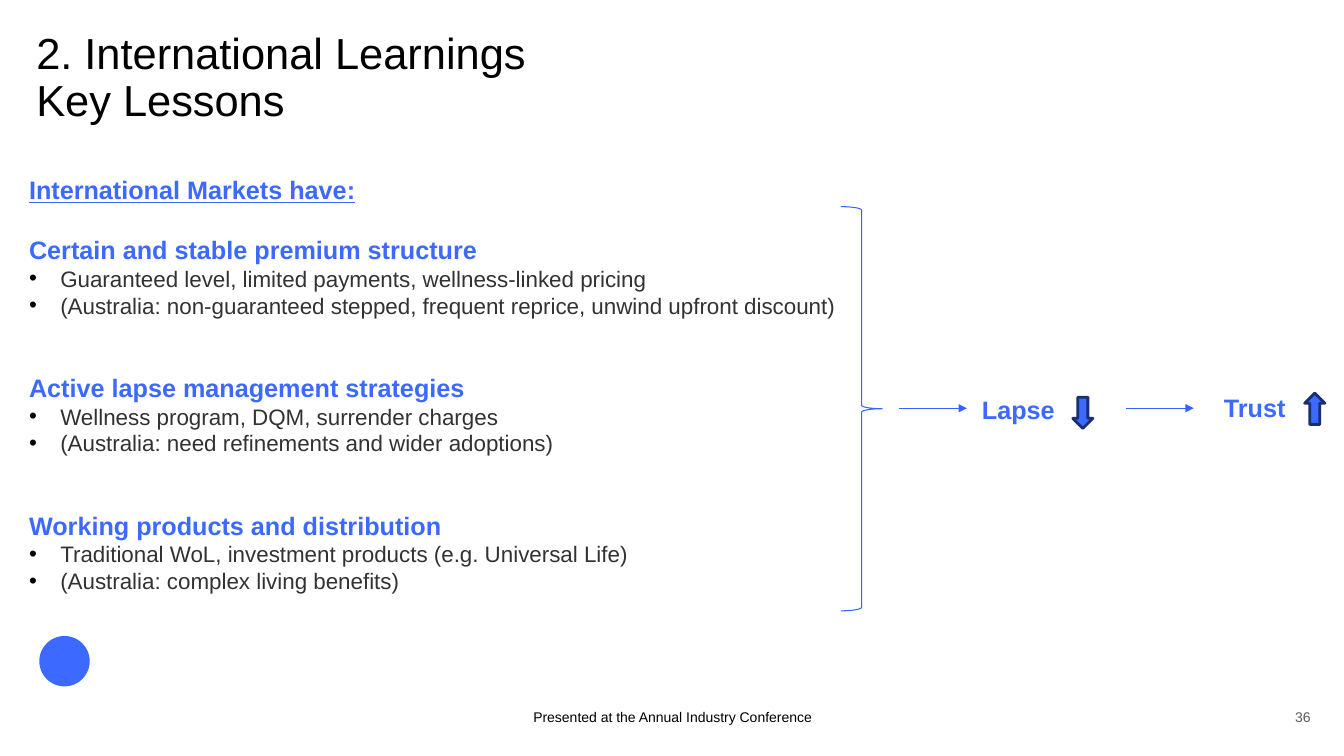
from pptx import Presentation
from pptx.dml.color import RGBColor
from pptx.enum.shapes import MSO_CONNECTOR, MSO_SHAPE
from pptx.enum.text import MSO_ANCHOR, PP_ALIGN
from pptx.oxml import parse_xml
from pptx.oxml.ns import nsdecls
from pptx.util import Inches, Pt

BLUE, LINE_BLUE, NAVY = "3C69FF", "3664FE", "1A2E70"
BLACK, DARK_GREY, GREY = "000000", "323232", "5B5B5B"


def color(value):
    return RGBColor.from_string(value)


def write(para, text, size=18, fill=BLUE, bold=False, underline=False,
          align=PP_ALIGN.LEFT, before=0, spacing=1.0, bullet=False):
    para.text = text
    para.alignment = align
    para.space_before = Pt(before)
    para.line_spacing = spacing
    for span in para.runs:
        span.font.name = "Arial"
        span.font.size = Pt(size)
        span.font.bold = bold
        span.font.underline = underline
        span.font.color.rgb = color(fill)
    if bullet:
        properties = para._p.get_or_add_pPr()
        properties.set("marL", str(Inches(0.31)))
        properties.set("indent", str(-Inches(0.31)))
        properties.append(parse_xml(
            f'<a:buClr {nsdecls("a")}><a:srgbClr val="{BLACK}"/></a:buClr>'))
        properties.append(parse_xml(f'<a:buFont {nsdecls("a")} typeface="Arial"/>'))
        properties.append(parse_xml(f'<a:buChar {nsdecls("a")} char="•"/>'))


deck = Presentation()
deck.slide_width, deck.slide_height = Inches(13.33), Inches(7.5)
page = deck.slides.add_slide(deck.slide_layouts[6])

# Title and footer
margin_free = [
    ((0.36, 0.32, 12.18, 1.09), MSO_ANCHOR.TOP, "2. International Learnings\nKey Lessons",
     dict(size=31, fill=BLACK, spacing=0.9)),
    ((12.54, 7, 0.46, 0.2), MSO_ANCHOR.BOTTOM, "36",
     dict(size=10, fill=GREY, align=PP_ALIGN.RIGHT)),
    ((4.42, 7, 4.5, 0.2), MSO_ANCHOR.BOTTOM, "Presented at the Annual Industry Conference",
     dict(size=10, fill=BLACK, align=PP_ALIGN.CENTER)),
]
for place, anchor, text, style in margin_free:
    box = page.shapes.add_textbox(*map(Inches, place))
    frame = box.text_frame
    frame.word_wrap = True
    frame.vertical_anchor = anchor
    frame.margin_left = frame.margin_right = frame.margin_top = frame.margin_bottom = 0
    write(frame.paragraphs[0], text, **style)

# Lessons from international markets
lessons = [
    ("Certain and stable premium structure",
     "Guaranteed level, limited payments, wellness-linked pricing",
     "(Australia: non-guaranteed stepped, frequent reprice, unwind upfront discount)"),
    ("Active lapse management strategies",
     "Wellness program, DQM, surrender charges",
     "(Australia: need refinements and wider adoptions)"),
    ("Working products and distribution",
     "Traditional WoL, investment products (e.g. Universal Life)",
     "(Australia: complex living benefits)"),
]
box = page.shapes.add_textbox(Inches(0.19), Inches(1.68), Inches(8.23), Inches(4.58))
frame = box.text_frame
frame.word_wrap = True
write(frame.paragraphs[0], "International Markets have:", bold=True, underline=True)
for index, (heading, *points) in enumerate(lessons):
    write(frame.add_paragraph(), heading, bold=True, before=38.5 if index else 21.5)
    for point in points:
        write(frame.add_paragraph(), point, size=16, fill=DARK_GREY, bullet=True)

# Outcome labels
for label, left, top, width in [("Lapse", 9.64, 3.86, 1.05), ("Trust", 12.04, 3.84, 0.91)]:
    box = page.shapes.add_textbox(Inches(left), Inches(top), Inches(width), Inches(0.4))
    box.text_frame.word_wrap = True
    write(box.text_frame.paragraphs[0], label, bold=True)

# Direction arrows: lapse falls, trust rises
for left, top, rotation in [(10.64, 3.94, 0), (12.94, 3.9, 180)]:
    arrow = page.shapes.add_shape(MSO_SHAPE.DOWN_ARROW, Inches(left), Inches(top),
                                  Inches(0.2), Inches(0.31))
    arrow.rotation = rotation
    arrow.shadow.inherit = False
    arrow.fill.solid()
    arrow.fill.fore_color.rgb = color(BLUE)
    arrow.line.color.rgb = color(NAVY)
    arrow.line.width = Pt(2)

# Brace around the lessons
brace = page.shapes.add_shape(MSO_SHAPE.RIGHT_BRACE, Inches(8.34), Inches(2.05),
                              Inches(0.41), Inches(4.01))
brace.shadow.inherit = False
brace.fill.background()
brace.line.color.rgb = color(LINE_BLUE)
brace.line.width = Pt(0.75)

# Flow from lessons to lapse to trust
for start in (8.92, 11.17):
    flow = page.shapes.add_connector(MSO_CONNECTOR.STRAIGHT, Inches(start), Inches(4.05),
                                     Inches(start + 0.67), Inches(4.05))
    flow.line.color.rgb = color(LINE_BLUE)
    flow.line.width = Pt(0.75)
    flow.line._get_or_add_ln().append(
        parse_xml(f'<a:tailEnd {nsdecls("a")} type="triangle"/>'))
    flow._element.spPr.append(parse_xml(f'<a:effectLst {nsdecls("a")}/>'))

# Plain mark in the lower left corner
mark = page.shapes.add_shape(MSO_SHAPE.OVAL, Inches(0.39), Inches(6.31),
                             Inches(0.5), Inches(0.5))
mark.shadow.inherit = False
mark.fill.solid()
mark.fill.fore_color.rgb = color(BLUE)
mark.line.fill.background()

deck.save("out.pptx")
